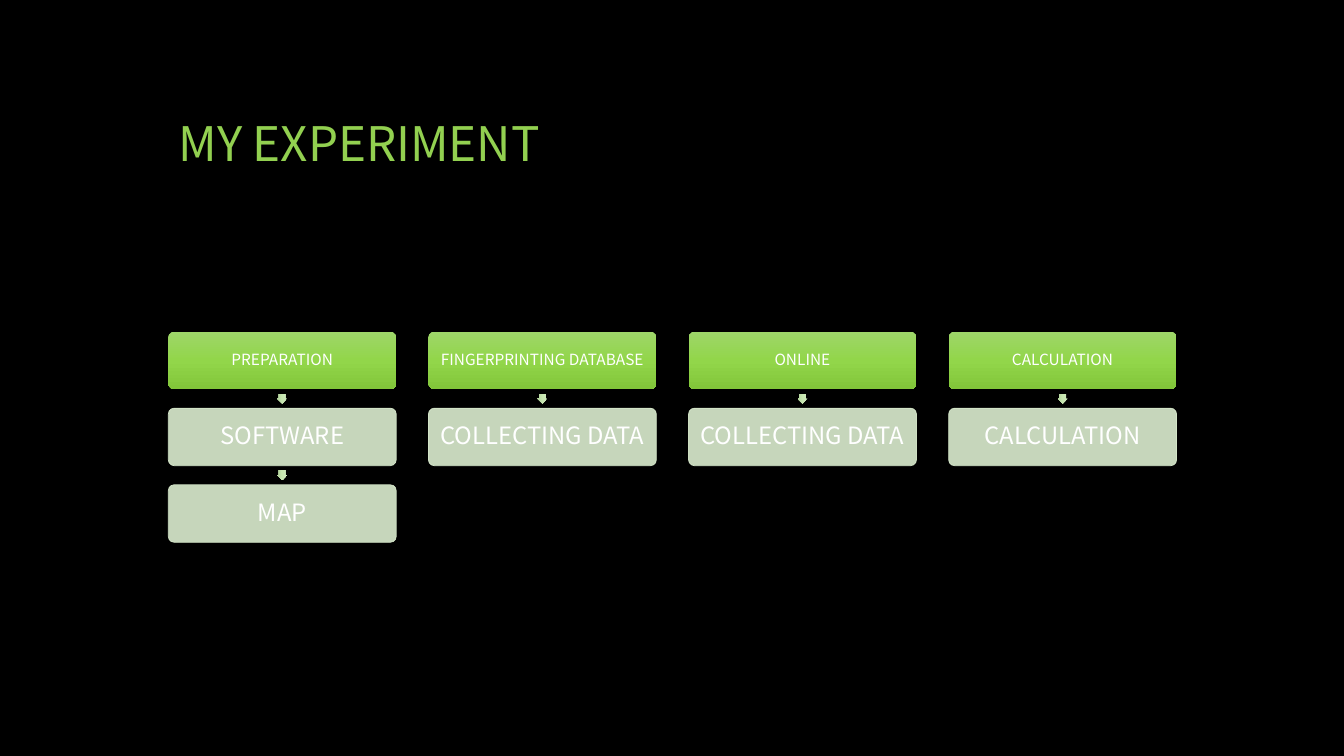
from copy import deepcopy

from pptx import Presentation
from pptx import util as u
from pptx.dml.color import RGBColor
from pptx.enum import shapes, text
from pptx.oxml import ns
from lxml import etree

FONT = "Noto Sans CJK SC"
COLORS = {"back": "000000", "title": "92D050", "text": "FFFFFF", "step": "DCEED0"}
GRADIENTS = {
    "head": ["9ED669", "92D64A", "82C63A"],
    "arrow": ["CFE9BD", "C7E7B0", "B0D199"],
}
STAGES = [
    ("PREPARATION", ["SOFTWARE", "MAP"]),
    ("FINGERPRINTING DATABASE", ["COLLECTING DATA"]),
    ("ONLINE", ["COLLECTING DATA"]),
    ("CALCULATION", ["CALCULATION"]),
]


def rgb(name):
    return RGBColor.from_string(COLORS[name])


def write(sp, words, size, color="text", align=text.PP_ALIGN.CENTER,
          anchor=text.MSO_ANCHOR.MIDDLE, inset=0.02):
    tf = sp.text_frame
    tf.word_wrap = True
    tf.auto_size = text.MSO_AUTO_SIZE.NONE
    tf.vertical_anchor = anchor
    tf.margin_left = tf.margin_right = u.Inches(inset)
    tf.margin_top = tf.margin_bottom = u.Inches(min(inset, 0.05))
    p = tf.paragraphs[0]
    p.alignment = align
    p.line_spacing = 0.9
    r = p.add_run()
    r.text = words
    r.font.name = FONT
    r.font.size = u.Pt(size)
    r.font.color.rgb = rgb(color)
    # East Asian fonts also need their own typeface entry
    etree.SubElement(r.font._element, ns.qn("a:ea"), typeface=FONT)


def fill_gradient(sp, colors):
    sp.fill.gradient()
    sp.fill.gradient_angle = 270
    stops = sp._element.spPr.find(ns.qn("a:gradFill")).find(ns.qn("a:gsLst"))
    stops.insert(1, deepcopy(stops[0]))
    for i, (stop, color) in enumerate(zip(sp.fill.gradient_stops, colors)):
        stop.position = i / (len(colors) - 1)
        stop.color.rgb = RGBColor.from_string(color)


def fill_translucent(sp, color, opacity):
    sp.fill.solid()
    sp.fill.fore_color.rgb = rgb(color)
    sp.line.color.rgb = rgb(color)
    sp.line.width = u.Pt(0.5)
    for clr in sp._element.spPr.iter(ns.qn("a:srgbClr")):
        etree.SubElement(clr, ns.qn("a:alpha"), val=str(opacity * 1000))


def add_preset(group, preset, left, top, width, height, adjust):
    sp = group.shapes.add_shape(preset, *map(u.Inches, (left, top, width, height)))
    sp.shadow.inherit = False
    sp.line.fill.background()
    for i, value in enumerate(adjust):
        sp.adjustments[i] = value
    return sp


def add_title(s, words, left, top, width, height):
    sp = s.shapes.title
    sp.left, sp.top, sp.width, sp.height = map(u.Inches, (left, top, width, height))
    write(sp, words, 34, "title", text.PP_ALIGN.LEFT, text.MSO_ANCHOR.BOTTOM, 0.1)


def add_stage(group, head, steps, left, top, width, height, row_pitch):
    """One column: a heading box, then an arrow and a box for each step."""
    box = shapes.MSO_SHAPE.ROUNDED_RECTANGLE
    sp = add_preset(group, box, left, top, width, height, [0.1])
    fill_gradient(sp, GRADIENTS["head"])
    write(sp, head, 11)

    arrow = 0.1
    for row, step in enumerate(steps, 1):
        y = top + row * row_pitch
        gap_middle = y - (row_pitch - height) / 2
        sp = add_preset(group, shapes.MSO_SHAPE.RIGHT_ARROW, left + (width - arrow) / 2,
                        gap_middle - arrow / 2, arrow, arrow, [0.667, 0.5])
        sp.rotation = 90
        fill_gradient(sp, GRADIENTS["arrow"])

        sp = add_preset(group, box, left, y, width, height, [0.1])
        fill_translucent(sp, "step", 90)
        write(sp, step, 17)


def add_stages(s, stages, left, top, width, box_width=2.26, box_height=0.57, row_pitch=0.76):
    """Spread the columns evenly over the given width."""
    group = s.shapes.add_group_shape()
    col_pitch = (width - box_width) / (len(stages) - 1)
    for col, (head, steps) in enumerate(stages):
        add_stage(group, head, steps, left + col * col_pitch, top,
                  box_width, box_height, row_pitch)


def main():
    prs = Presentation()
    prs.slide_width, prs.slide_height = u.Inches(13.33), u.Inches(7.5)
    s = prs.slides.add_slide(prs.slide_layouts[5])
    s.background.fill.solid()
    s.background.fill.fore_color.rgb = rgb("back")

    margin, width = 1.67, 10
    add_title(s, "MY EXPERIMENT", margin, 0.5, width, 1.25)
    add_stages(s, STAGES, margin, 3.29, width)
    prs.save("out.pptx")


if __name__ == "__main__":
    main()
